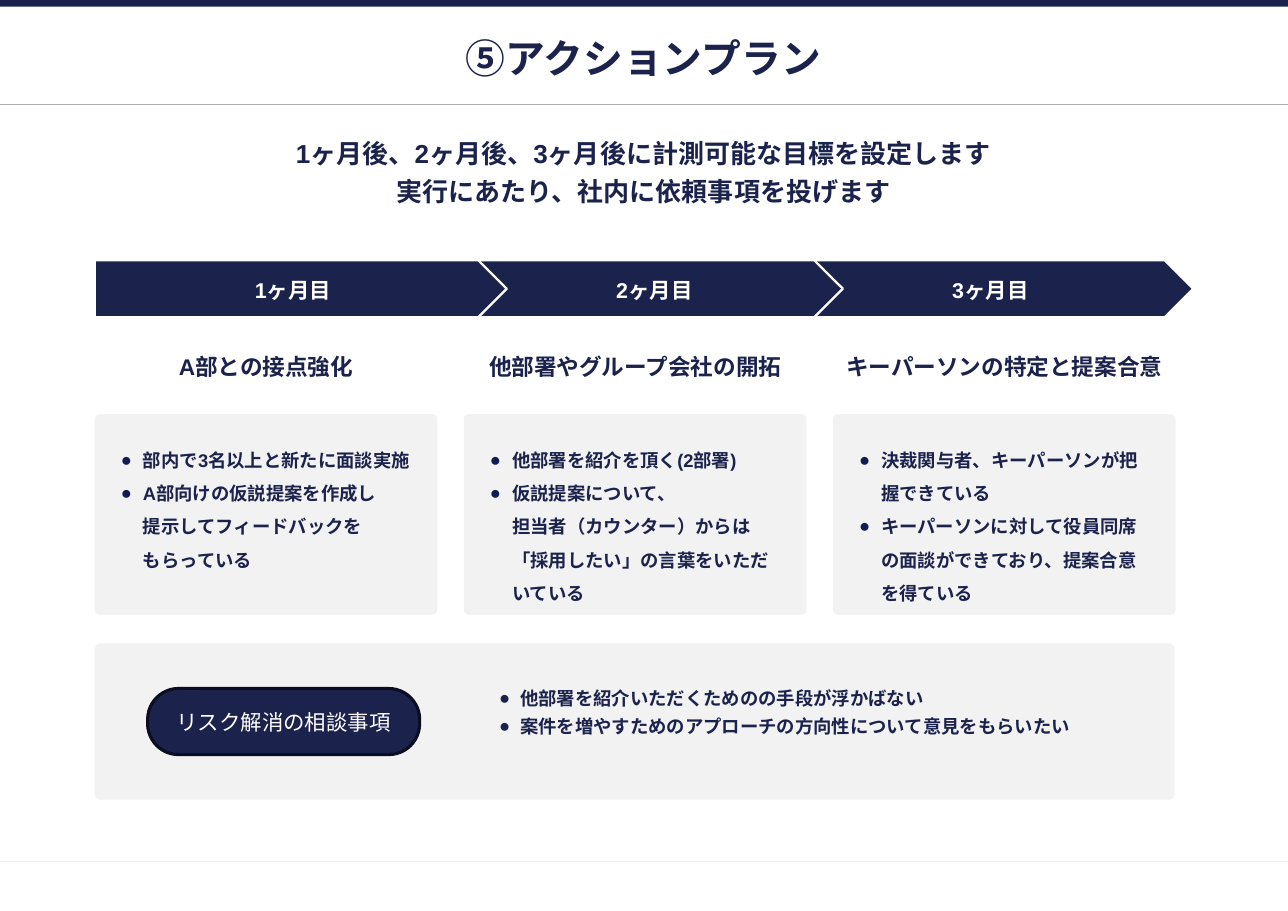
from copy import deepcopy
from dataclasses import dataclass
from typing import NamedTuple

from lxml.etree import SubElement
from pptx import Presentation
from pptx.dml.color import RGBColor
from pptx.enum.shapes import MSO_CONNECTOR, MSO_SHAPE
from pptx.enum.text import MSO_ANCHOR, PP_ALIGN
from pptx.oxml.ns import qn
from pptx.util import Pt


@dataclass(frozen=True)
class Theme:
    font: str = "Arial"
    navy: str = "1B224C"
    bullet: str = "0F1C50"
    pill_edge: str = "0B0E20"
    white: str = "FFFFFF"
    panel: str = "F2F2F2"
    rule: str = "AFAFAF"
    title: float = 26
    lead: float = 17
    heading: float = 14.8
    label: float = 14
    body: float = 12


class Box(NamedTuple):
    left: float
    top: float
    width: float
    height: float

    def inside(self, dx, dy, width, height):
        return Box(self.left + dx, self.top + dy, width, height)

    def points(self):
        return [Pt(value) for value in self]


THEME = Theme()
PAGE_WIDTH, PAGE_HEIGHT = 841.7, 595.4
INSET = 2.9

# Each month: arrow left, label left, label, heading, body width, goals
MONTHS = [
    (61.9, 103.7, "1ヶ月目", "A部との接点強化", 203,
     ["部内で3名以上と新たに面談実施",
      "A部向けの仮説提案を作成し\n提示してフィードバックを\nもらっている"]),
    (281.5, 339.8, "2ヶ月目", "他部署やグループ会社の開拓", 195.8,
     ["他部署を紹介を頂く(2部署)",
      "仮説提案について、\n担当者（カウンター）からは「採用したい」の言葉をいただいている"]),
    (510.5, 559.4, "3ヶ月目", "キーパーソンの特定と提案合意", 195.8,
     ["決裁関与者、キーパーソンが把握できている",
      "キーパーソンに対して役員同席の面談ができており、提案合意を得ている"]),
]
RISKS = ["他部署を紹介いただくためのの手段が浮かばない",
         "案件を増やすためのアプローチの方向性について意見をもらいたい"]


def color(value):
    return RGBColor.from_string(value)


def add_bullet(para, tint, margin, hanging):
    props = para._p.get_or_add_pPr()
    props.set("marL", str(Pt(margin)))
    props.set("indent", str(-Pt(hanging)))
    SubElement(SubElement(props, qn("a:buClr")), qn("a:srgbClr"), val=tint)
    SubElement(props, qn("a:buFont"), typeface=THEME.font)
    SubElement(props, qn("a:buChar"), char="●")


def write(frame, lines, size, tint=THEME.navy, bold=True, align=PP_ALIGN.CENTER,
          anchor=MSO_ANCHOR.MIDDLE, spacing=None, before=None, after=None,
          bullet=None, margin=14.4, hanging=14.4):
    frame.word_wrap = True
    frame.vertical_anchor = anchor
    for index, line in enumerate(lines):
        para = frame.add_paragraph() if index else frame.paragraphs[0]
        if bullet:
            add_bullet(para, bullet, margin, hanging)
        para.alignment = align
        if spacing:
            para.line_spacing = spacing
        if before and index:
            para.space_before = Pt(before)
        if after and index == len(lines) - 1:
            para.space_after = Pt(after)
        para.text = line
        for span in para.runs:
            span.font.name, span.font.size = THEME.font, Pt(size)
            span.font.bold = bold
            span.font.color.rgb = color(tint)
        for line_break in para._p.findall(qn("a:br")):
            line_break.insert(0, deepcopy(para.runs[0]._r.rPr))


def add_text(page, box, lines, size, bottom=INSET, **style):
    frame = page.shapes.add_textbox(*box.points()).text_frame
    frame.margin_left = frame.margin_right = frame.margin_top = Pt(INSET)
    frame.margin_bottom = Pt(bottom)
    write(frame, lines, size, **style)


def add_block(page, box, kind, fill, edge=None, weight=1.5, corner=None):
    shape = page.shapes.add_shape(kind, *box.points())
    shape.shadow.inherit = False
    shape.fill.solid()
    shape.fill.fore_color.rgb = color(fill)
    if edge:
        shape.line.color.rgb = color(edge)
        shape.line.width = Pt(weight)
    else:
        shape.line.fill.background()
    if corner is not None:
        shape.adjustments[0] = corner
    return shape


def add_rule(page, top, tint):
    rule = page.shapes.add_connector(MSO_CONNECTOR.STRAIGHT, 0, Pt(top), Pt(PAGE_WIDTH), Pt(top))
    rule.line.color.rgb = color(tint)
    rule.line.width = Pt(0.75)
    SubElement(rule._element.spPr, qn("a:effectLst"))


def draw_header(page, box):
    add_rule(page, 563, THEME.panel)
    add_block(page, Box(0, 0, PAGE_WIDTH, 4.3), MSO_SHAPE.RECTANGLE, THEME.navy)
    add_rule(page, 68.4, THEME.rule)
    add_text(page, box.inside(0, 0, box.width, 31), ["⑤アクションプラン"],
             THEME.title, bottom=4.3)
    add_text(page, box.inside(0, 64.1, box.width, 59),
             ["1ヶ月後、2ヶ月後、3ヶ月後に計測可能な目標を設定します",
              "実行にあたり、社内に依頼事項を投げます"],
             THEME.lead, anchor=MSO_ANCHOR.TOP, before=4, after=4)


def draw_timeline(page, box):
    # Later arrows lie beneath earlier ones
    for left, *_ in reversed(MONTHS):
        add_block(page, Box(left, box.top, 269.3, box.height), MSO_SHAPE.PENTAGON,
                  THEME.navy, THEME.white, corner=0.5)
    for _, left, label, *_ in MONTHS:
        add_text(page, Box(left, box.top + 5.7, 175.7, 27.4), [label],
                 THEME.label, tint=THEME.white)


def draw_month(page, box, heading, body_width, goals):
    add_text(page, box.inside(0, 0, box.width, 37.4), [heading], THEME.heading, after=3.7)
    card = box.inside(0, 49.7, box.width, 131)
    add_block(page, card, MSO_SHAPE.ROUNDED_RECTANGLE, THEME.panel, corner=0.024)
    add_text(page, card.inside(14.2, 13, body_width, 114.5), goals, THEME.body,
             align=PP_ALIGN.LEFT, anchor=MSO_ANCHOR.TOP, spacing=1.5, bullet=THEME.bullet)


def draw_risks(page, box):
    add_block(page, box, MSO_SHAPE.ROUNDED_RECTANGLE, THEME.panel, corner=0.035)
    add_text(page, box.inside(247.7, 25.9, 423.4, 43.2), RISKS, THEME.body,
             align=PP_ALIGN.LEFT, anchor=MSO_ANCHOR.TOP, before=4,
             bullet=THEME.navy, margin=27.4, hanging=13.7)
    pill = add_block(page, box.inside(34.6, 29.5, 177.8, 43.2), MSO_SHAPE.ROUNDED_RECTANGLE,
                     THEME.navy, THEME.pill_edge, weight=2, corner=0.467)
    write(pill.text_frame, ["リスク解消の相談事項"], THEME.label, tint=THEME.white, bold=False)


def main():
    deck = Presentation()
    deck.slide_width, deck.slide_height = Pt(PAGE_WIDTH), Pt(PAGE_HEIGHT)
    page = deck.slides.add_slide(deck.slide_layouts[6])
    draw_header(page, Box(38.2, 23, 764.6, 123))
    draw_timeline(page, Box(61.9, 170, 717.9, 37.4))
    for column, (_, _, _, heading, body_width, goals) in enumerate(MONTHS):
        draw_month(page, Box(61.9 + column * 241.2, 221, 223.9, 180.7),
                   heading, body_width, goals)
    draw_risks(page, Box(61.9, 420.5, 705.6, 102.2))
    deck.save("out.pptx")


if __name__ == "__main__":
    main()
